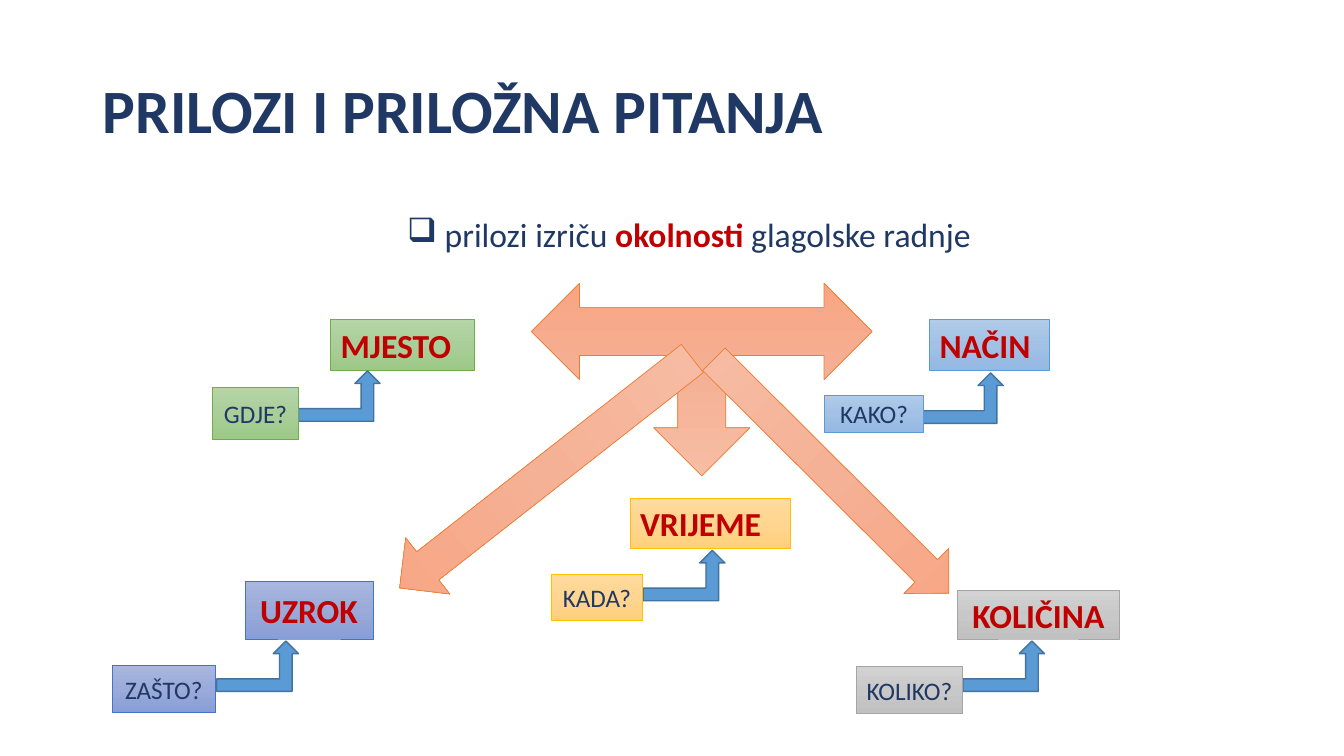
from copy import deepcopy

from lxml.etree import SubElement
from pptx import Presentation
from pptx.dml.color import RGBColor
from pptx.enum.shapes import MSO_SHAPE
from pptx.enum.text import MSO_ANCHOR, MSO_AUTO_SIZE, PP_ALIGN
from pptx.oxml.ns import qn
from pptx.util import Inches, Pt

NAVY = "203864"
RED = "C00000"
ORANGE = ("F7BDA5", "F5B196", "F8A582", "ED7D31")
GREEN = ("B5D5A7", "AACE9A", "9CC987", "70AD47")
BLUE = ("B1CBE9", "A3C1E5", "93B9E4", "5B9BD5")
GOLD = ("FFDB9E", "FFD590", "FFD07C", "FFC000")
INDIGO = ("A8B7DF", "9AABD9", "889ED7", "4472C4")
GRAY = ("D2D2D2", "C8C8C8", "C0C0C0", "A5A5A5")

CIRCUMSTANCE_ARROWS = [
    (MSO_SHAPE.LEFT_RIGHT_UP_ARROW, (5.27, 2.81, 3.38, 1.91), 180),
    (MSO_SHAPE.DOWN_ARROW, (5.06, 2.85, 0.71, 3.69), 51.9),
    (MSO_SHAPE.DOWN_ARROW, (7.93, 3.08, 0.63, 3.29), 314.9),
]
OPEN = {"align": PP_ALIGN.LEFT, "anchor": MSO_ANCHOR.TOP}
CENTRED = {"align": PP_ALIGN.CENTER, "anchor": MSO_ANCHOR.MIDDLE}
CIRCUMSTANCES = [
    ("MJESTO", (3.28, 3.17, 1.43, 0.5), OPEN,
     "GDJE?", (2.11, 3.84, 0.85, 0.52), (2.96, 3.68), GREEN),
    ("NAČIN", (9.22, 3.17, 1.19, 0.5), OPEN,
     "KAKO?", (8.18, 3.92, 0.98, 0.37), (9.14, 3.7), BLUE),
    ("VRIJEME", (6.25, 4.94, 1.59, 0.5), OPEN,
     "KADA?", (5.47, 5.7, 0.9, 0.45), (6.38, 5.46), GOLD),
    ("UZROK", (2.43, 5.77, 1.27, 0.57), CENTRED,
     "ZAŠTO?", (1.11, 6.6, 1.03, 0.47), (2.15, 6.36), INDIGO),
    ("KOLIČINA", (9.5, 5.86, 1.6, 0.48), CENTRED,
     "KOLIKO?", (8.49, 6.61, 1.06, 0.47), (9.55, 6.36), GRAY),
]


def color(hex_code):
    return RGBColor.from_string(hex_code)


def write(paragraph, text, size=24, ink=NAVY, bold=False, font="Calibri"):
    run = paragraph.add_run()
    run.text = text
    run.font.name = font
    run.font.size = Pt(size)
    run.font.bold = bold
    run.font.color.rgb = color(ink)


class AdverbSlide:
    def __init__(self, presentation):
        self.slide = presentation.slides.add_slide(presentation.slide_layouts[5])
        self.shapes = self.slide.shapes

    def title(self, text, box):
        heading = self.shapes.title
        heading.left, heading.top, heading.width, heading.height = map(Inches, box)
        frame = heading.text_frame
        frame.word_wrap = True
        frame.auto_size = MSO_AUTO_SIZE.NONE
        frame.vertical_anchor = MSO_ANCHOR.MIDDLE
        paragraph = frame.paragraphs[0]
        paragraph.alignment = PP_ALIGN.LEFT
        paragraph.line_spacing = 0.9
        write(paragraph, text, size=44, bold=True)

    def bullet(self, parts, box):
        frame = self.shapes.add_textbox(*map(Inches, box)).text_frame
        frame.word_wrap = True
        paragraph = frame.paragraphs[0]
        paragraph.line_spacing = 0.9
        paragraph.space_before = Pt(10)
        properties = paragraph._p.get_or_add_pPr()
        properties.set("marL", str(Inches(0.25)))
        properties.set("indent", str(Inches(-0.25)))
        SubElement(properties, qn("a:buChar")).set("char", "❑")
        for text, style in parts:
            write(paragraph, text, **style)

    def shape(self, kind, box, border, width):
        shape = self.shapes.add_shape(kind, *map(Inches, box))
        shape.shadow.inherit = False
        shape.line.color.rgb = color(border)
        shape.line.width = Pt(width)
        return shape

    def gradient_shape(self, kind, box, palette, rotation=0):
        shape = self.shape(kind, box, palette[3], 0.5)
        shape.rotation = rotation
        shape.fill.gradient()
        shape.fill.gradient_angle = 270
        first = shape.fill._xPr.find(qn("a:gradFill")).find(qn("a:gsLst"))[0]
        first.addnext(deepcopy(first))
        for stop, position, tone in zip(shape.fill.gradient_stops, (0, 0.5, 1), palette):
            stop.position = position
            stop.color.rgb = color(tone)
        return shape

    def label(self, text, box, palette, align, anchor, **style):
        frame = self.gradient_shape(MSO_SHAPE.RECTANGLE, box, palette).text_frame
        frame.word_wrap = True
        frame.vertical_anchor = anchor
        frame.paragraphs[0].alignment = align
        write(frame.paragraphs[0], text, **style)

    def bent_arrow(self, corner):
        arrow = self.shape(MSO_SHAPE.BENT_UP_ARROW, (*corner, 0.81, 0.5), "43739E", 1)
        arrow.fill.solid()
        arrow.fill.fore_color.rgb = color("5B9BD5")


def main():
    presentation = Presentation()
    presentation.slide_width = Inches(13.33)
    presentation.slide_height = Inches(7.5)
    adverbs = AdverbSlide(presentation)
    adverbs.title("PRILOZI I PRILOŽNA PITANJA", (0.92, 0.4, 11.5, 1.45))
    adverbs.bullet(
        [(" prilozi izriču ", {}),
         ("okolnosti", {"ink": RED, "bold": True}),
         (" glagolske radnje", {})],
        (3.94, 2.12, 6.84, 4.76),
    )
    for kind, box, rotation in CIRCUMSTANCE_ARROWS:
        adverbs.gradient_shape(kind, box, ORANGE, rotation)
    for name, name_box, layout, question, question_box, corner, palette in CIRCUMSTANCES:
        adverbs.label(name, name_box, palette, **layout, ink=RED, bold=True)
        adverbs.bent_arrow(corner)
        adverbs.label(question, question_box, palette, **CENTRED, size=18)
    presentation.save("out.pptx")


if __name__ == "__main__":
    main()
